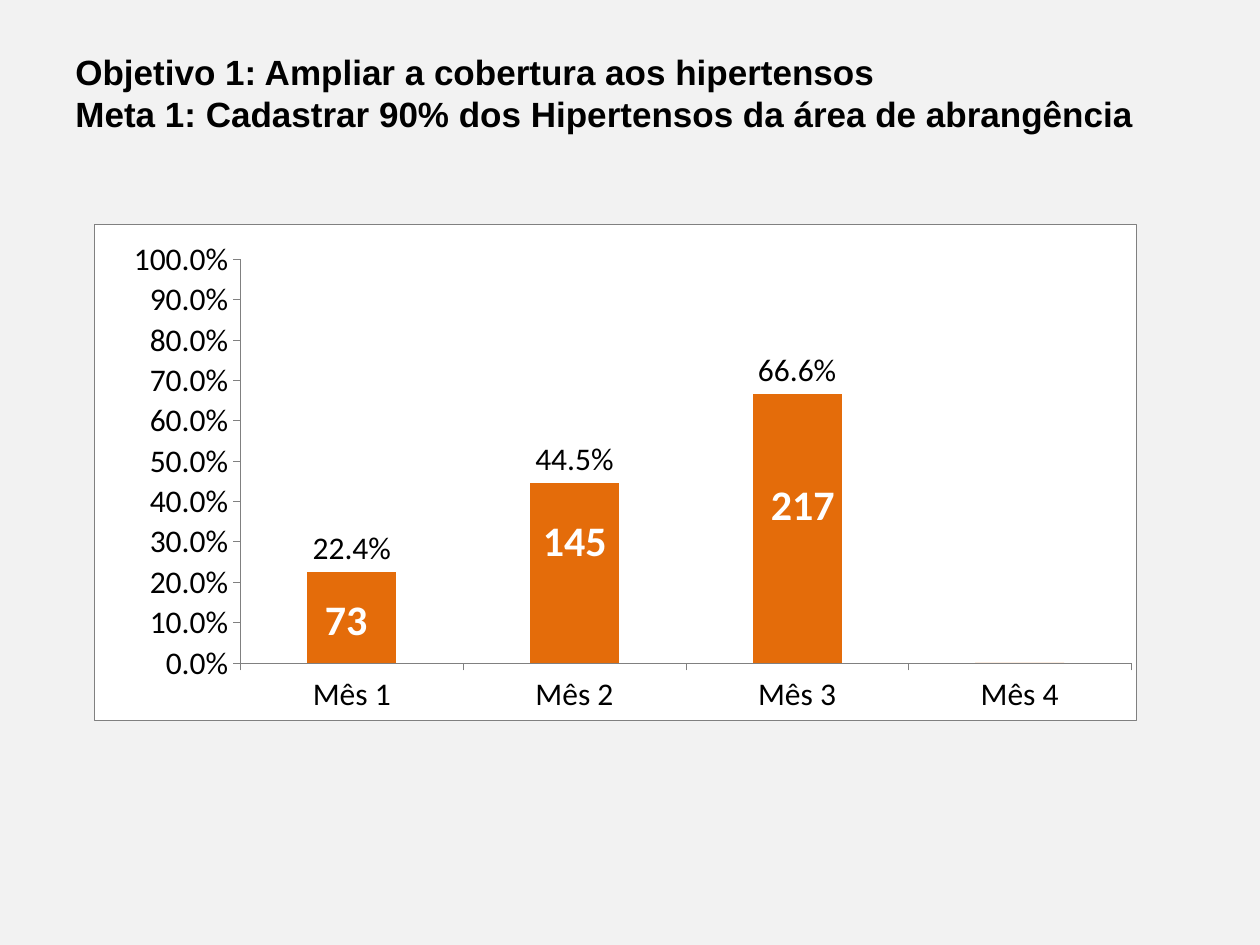
from lxml.etree import SubElement
from pptx import Presentation
from pptx.chart.data import CategoryChartData
from pptx.dml.color import RGBColor
from pptx.enum.chart import XL_CHART_TYPE, XL_LABEL_POSITION, XL_TICK_MARK
from pptx.enum.text import MSO_ANCHOR
from pptx.oxml import parse_xml
from pptx.oxml.ns import nsdecls, qn
from pptx.util import Inches, Pt

TITLE = [
    "Objetivo 1: Ampliar a cobertura aos hipertensos",
    "Meta 1: Cadastrar 90% dos Hipertensos da área de abrangência",
]
MONTHS = ["Mês 1", "Mês 2", "Mês 3", "Mês 4"]
RATES = [0.224, 0.445, 0.666, 0]
COUNTS = [("73", 2.48, 4.66), ("145", 4.21, 4.03), ("217", 6.02, 3.75)]
PLOT = {"x": 0.14, "y": 0.07, "w": 0.855, "h": 0.814}

PAPER = RGBColor(0xF2, 0xF2, 0xF2)
WHITE = RGBColor(0xFF, 0xFF, 0xFF)
BLACK = RGBColor(0, 0, 0)
GRAY = RGBColor(0x80, 0x80, 0x80)
ORANGE = RGBColor(0xE4, 0x6C, 0x0A)


def style(font, name, size, color, bold=False):
    font.name, font.size, font.bold = name, Pt(size), bold
    font.color.rgb = color


def add_text(slide, lines, box, name, size, color):
    frame = slide.shapes.add_textbox(*map(Inches, box)).text_frame
    frame.word_wrap = True
    frame.vertical_anchor = MSO_ANCHOR.MIDDLE
    for i, line in enumerate(lines):
        para = frame.paragraphs[0] if i == 0 else frame.add_paragraph()
        para.text = line
        style(para.font, name, size, color, True)


def area(line):
    return parse_xml(
        f'<c:spPr {nsdecls("c", "a")}><a:solidFill><a:srgbClr val="{WHITE}"/>'
        f"</a:solidFill><a:ln w=\"{Pt(0.25)}\">{line}</a:ln></c:spPr>"
    )


def set_plot(chart):
    root = chart.element
    plot = root.find(".//" + qn("c:plotArea"))
    for old in plot.findall(qn("c:layout")):
        plot.remove(old)
    layout = parse_xml(f'<c:layout {nsdecls("c")}/>')
    manual = SubElement(layout, qn("c:manualLayout"))
    parts = {"layoutTarget": "inner", "xMode": "edge", "yMode": "edge", **PLOT}
    for tag, val in parts.items():
        SubElement(manual, qn("c:" + tag)).set("val", str(val))
    plot.insert(0, layout)
    plot.append(area("<a:noFill/>"))
    edge = f'<a:solidFill><a:srgbClr val="{GRAY}"/></a:solidFill>'
    root.find(qn("c:chart")).addnext(area(edge))


def add_bars(slide):
    data = CategoryChartData(number_format="0.0%")
    data.categories = MONTHS
    data.add_series("Series 1", RATES)
    box = map(Inches, (0.75, 1.78, 8.27, 3.94))
    chart = slide.shapes.add_chart(XL_CHART_TYPE.COLUMN_CLUSTERED, *box, data).chart
    chart.has_legend = chart.has_title = False
    style(chart.font, "Calibri", 18, BLACK)

    for axis in (chart.category_axis, chart.value_axis):
        axis.has_major_gridlines = False
        axis.major_tick_mark = XL_TICK_MARK.OUTSIDE
        axis.format.line.color.rgb = GRAY
        axis.format.line.width = Pt(0.25)
    rate = chart.value_axis
    rate.minimum_scale, rate.maximum_scale, rate.major_unit = 0, 1, 0.1
    rate.tick_labels.number_format = "0.0%"
    rate.tick_labels.number_format_is_linked = False

    plot = chart.plots[0]
    plot.gap_width = 150
    plot.vary_by_categories = False
    bars = plot.series[0]
    bars.format.fill.solid()
    bars.format.fill.fore_color.rgb = ORANGE
    tags = bars.data_labels
    tags.show_value = True
    tags.number_format = "0.0%;;"
    tags.number_format_is_linked = False
    tags.position = XL_LABEL_POSITION.OUTSIDE_END
    set_plot(chart)


def main():
    deck = Presentation()
    deck.slide_width, deck.slide_height = Inches(10), Inches(7.5)
    slide = deck.slides.add_slide(deck.slide_layouts[6])
    slide.background.fill.solid()
    slide.background.fill.fore_color.rgb = PAPER
    add_text(slide, TITLE, (0.5, 0.11, 9, 1.25), "Arial", 20, BLACK)
    add_bars(slide)
    for count, left, top in COUNTS:
        add_text(slide, [count], (left, top, 0.71, 0.5), "Calibri", 24, WHITE)
    deck.save("out.pptx")


if __name__ == "__main__":
    main()
